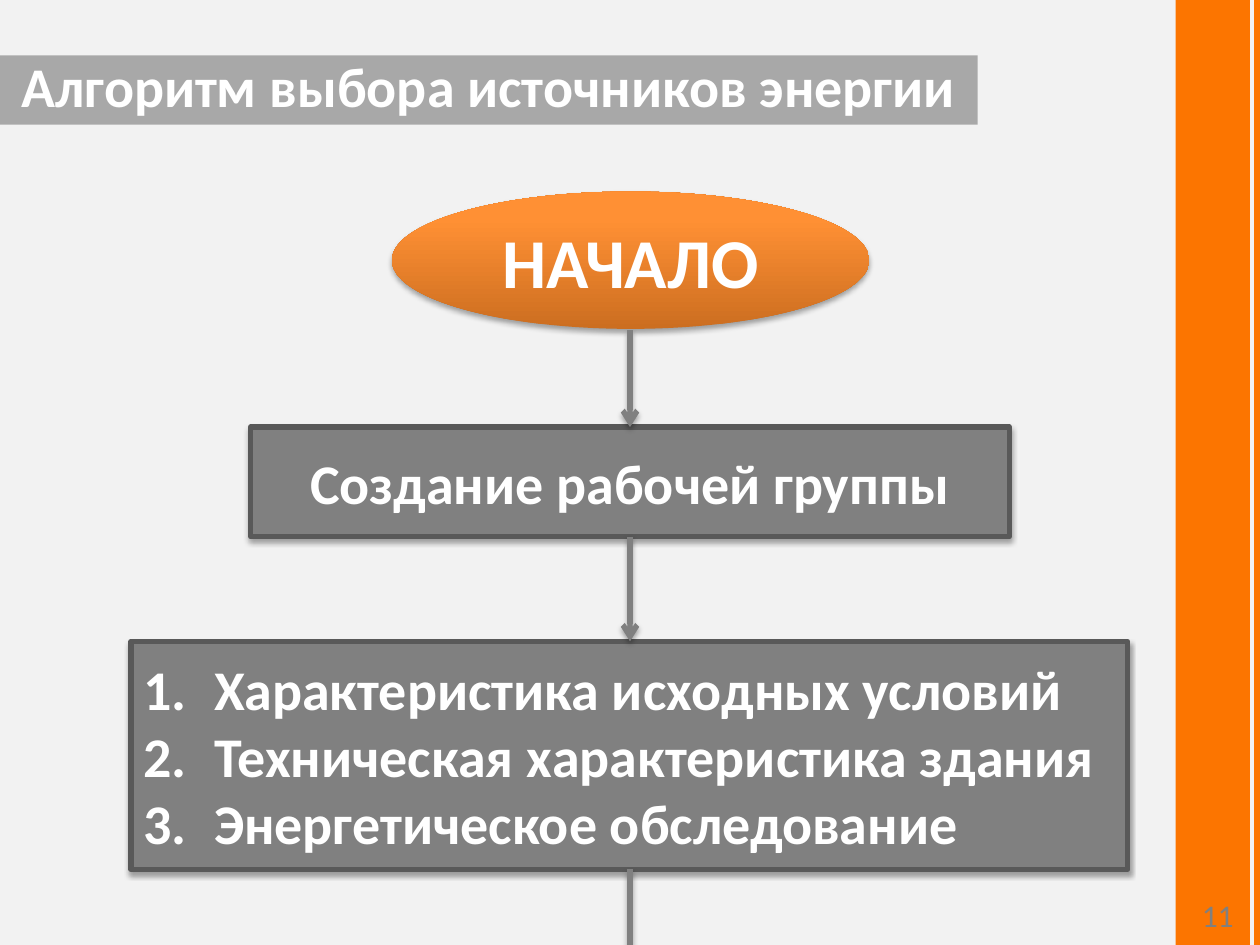
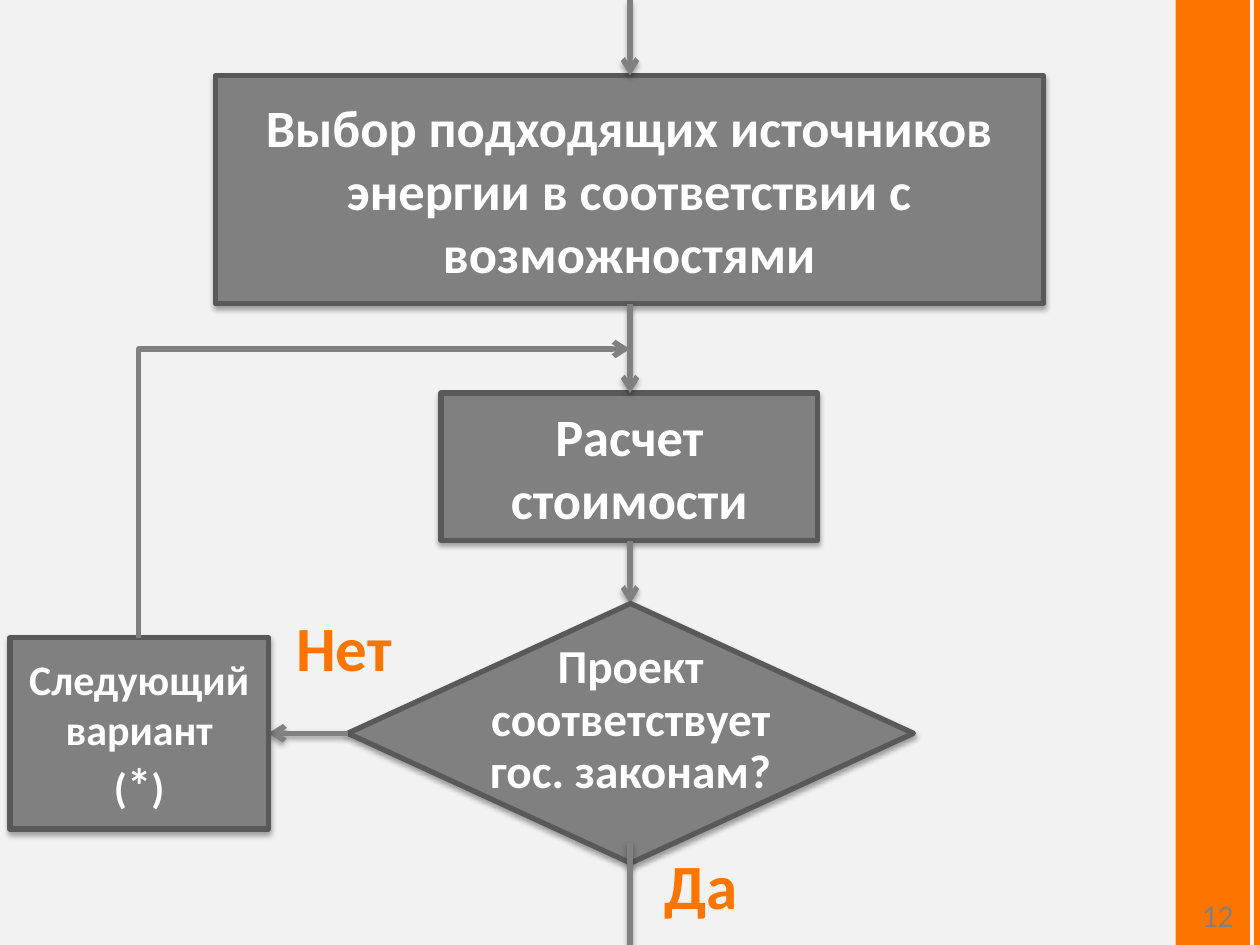
from copy import deepcopy

from lxml import etree
from pptx import Presentation
from pptx.dml.color import RGBColor
from pptx.enum.shapes import MSO_CONNECTOR, MSO_SHAPE
from pptx.enum.text import MSO_ANCHOR, MSO_AUTO_SIZE, PP_ALIGN
from pptx.oxml.ns import qn
from pptx.util import Inches, Pt

RECTANGLE, ELLIPSE = MSO_SHAPE.RECTANGLE, MSO_SHAPE.OVAL
DECISION = MSO_SHAPE.FLOWCHART_DECISION
STRAIGHT, ELBOW = MSO_CONNECTOR.STRAIGHT, MSO_CONNECTOR.ELBOW
CENTER, LEFT = PP_ALIGN.CENTER, PP_ALIGN.LEFT
TOP, MIDDLE, BOTTOM = MSO_ANCHOR.TOP, MSO_ANCHOR.MIDDLE, MSO_ANCHOR.BOTTOM
NO_AUTOFIT = MSO_AUTO_SIZE.NONE

PAPER = RGBColor(0xF2, 0xF2, 0xF2)
ORANGE = RGBColor(0xFC, 0x75, 0x00)
GRAY = RGBColor(0x80, 0x80, 0x80)
DARK_GRAY = RGBColor(0x59, 0x59, 0x59)
INK = RGBColor(0x0D, 0x0D, 0x0D)
WHITE = RGBColor(0xFF, 0xFF, 0xFF)
START_STOPS = [
    (0, RGBColor(0xCC, 0x6E, 0x20)),
    (0.8, RGBColor(0xFF, 0x90, 0x34)),
    (1, RGBColor(0xFF, 0x91, 0x36)),
]

FONT = "Calibri"
TITLE_ONLY, BLANK = 5, 6
WIDTH, HEIGHT = 10, 7.5
AXIS = 5


def child(parent, tag, **attributes):
    return etree.SubElement(parent, qn(tag), {k: str(v) for k, v in attributes.items()})


class Flowchart:
    def __init__(self):
        self.prs = Presentation()
        self.prs.slide_width, self.prs.slide_height = Inches(WIDTH), Inches(HEIGHT)
        backdrop = self.prs.slide_master.background.fill
        backdrop.solid()
        backdrop.fore_color.rgb = PAPER
        self.slide = None

    def new_slide(self, layout, number):
        self.slide = self.prs.slides.add_slide(self.prs.slide_layouts[layout])
        band = self.shape(RECTANGLE, 9.33, 0, 0.59, HEIGHT)
        self.paint(band, ORANGE)
        self.connector(STRAIGHT, (9.98, 0), (9.98, HEIGHT), ORANGE, 4)
        self.label(str(number), 9.33, 7.06, 0.67, 0.42, 18, GRAY, bold=False)

    def title(self, text, left, top, width, height):
        title = self.slide.shapes.title
        title.left, title.top = Inches(left), Inches(top)
        title.width, title.height = Inches(width), Inches(height)
        self.paint(title, INK)
        tint = title._element.spPr.find(qn("a:solidFill"))[0]
        child(tint, "a:alpha", val=32000)
        self.fill_text(title, [text], 32, anchor=BOTTOM)

    def shape(self, kind, left, top, width, height):
        shape = self.slide.shapes.add_shape(
            kind, Inches(left), Inches(top), Inches(width), Inches(height))
        shape.shadow.inherit = False
        shape.line.fill.background()
        return shape

    def paint(self, shape, color):
        shape.fill.solid()
        shape.fill.fore_color.rgb = color

    def shadow(self, element):
        effects = element.spPr.find(qn("a:effectLst"))
        outer = child(effects, "a:outerShdw", blurRad=Pt(3.1), dist=Pt(1.8),
                      dir=5400000, rotWithShape=0)
        child(child(outer, "a:srgbClr", val="000000"), "a:alpha", val=35000)

    def fill_text(self, shape, paragraphs, size, color=WHITE, bold=True,
                  align=CENTER, anchor=MIDDLE):
        frame = shape.text_frame
        frame.auto_size = NO_AUTOFIT
        frame.word_wrap = True
        frame.vertical_anchor = anchor
        for index, content in enumerate(paragraphs):
            paragraph = frame.add_paragraph() if index else frame.paragraphs[0]
            paragraph.alignment = align
            runs = [(content, size)] if isinstance(content, str) else content
            for text, run_size in runs:
                run = paragraph.add_run()
                run.text = text
                run.font.name, run.font.size = FONT, Pt(run_size)
                run.font.bold, run.font.color.rgb = bold, color
        return frame

    def label(self, text, left, top, width, height, size, color, bold=True):
        box = self.slide.shapes.add_textbox(
            Inches(left), Inches(top), Inches(width), Inches(height))
        self.fill_text(box, [text], size, color, bold, anchor=TOP)

    def start(self, text, left, top, width, height):
        start = self.shape(ELLIPSE, left, top, width, height)
        start.fill.gradient()
        start.fill.gradient_angle = 90
        stop_list = start._element.spPr.find(qn("a:gradFill")).find(qn("a:gsLst"))
        stop_list.append(deepcopy(stop_list[0]))
        for stop, (position, color) in zip(start.fill.gradient_stops, START_STOPS):
            stop.position, stop.color.rgb = position, color
        self.shadow(start._element)
        self.fill_text(start, [text], 40)

    def step(self, paragraphs, left, top, width, height, size,
             kind=RECTANGLE, align=CENTER, anchor=MIDDLE):
        step = self.shape(kind, left, top, width, height)
        self.paint(step, GRAY)
        step.line.color.rgb, step.line.width = DARK_GRAY, Pt(3)
        self.shadow(step._element)
        return self.fill_text(step, paragraphs, size, align=align, anchor=anchor)

    def numbered_step(self, items, left, top, width, height, size):
        frame = self.step(items, left, top, width, height, size, align=LEFT)
        for paragraph in frame.paragraphs:
            properties = paragraph._p.get_or_add_pPr()
            properties.set("marL", str(Inches(0.56)))
            properties.set("indent", str(-Inches(0.56)))
            child(properties, "a:buFont", typeface="+mj-lt")
            child(properties, "a:buAutoNum", type="arabicPeriod")

    def decision(self, text, left, top, width, height, size):
        frame = self.step([text], left, top, width, height, size, DECISION, anchor=BOTTOM)
        frame.margin_left = frame.margin_right = 0
        frame.margin_top = frame.margin_bottom = 0
        frame.paragraphs[0].line_spacing = Pt(30)

    def connector(self, kind, begin, end, color=GRAY, weight=3, head=False):
        line = self.slide.shapes.add_connector(
            kind, *(Inches(value) for value in (*begin, *end)))
        line.line.color.rgb, line.line.width = color, Pt(weight)
        if head:
            child(line.line._get_or_add_ln(), "a:tailEnd", type="arrow")
        child(line._element.spPr, "a:effectLst")
        return line

    def flow(self, begin, end, head=True):
        self.shadow(self.connector(STRAIGHT, begin, end, head=head)._element)

    def down(self, top, bottom, head=True):
        self.flow((AXIS, top), (AXIS, bottom), head)

    def loop_back(self, begin, end):
        middle_x, middle_y = (begin[0] + end[0]) / 2, (begin[1] + end[1]) / 2
        half_width, half_height = (begin[1] - end[1]) / 2, (end[0] - begin[0]) / 2
        loop = self.connector(
            ELBOW, (middle_x + half_width, middle_y + half_height),
            (middle_x - half_width, middle_y - half_height), head=True)
        properties = loop._element.spPr
        properties.find(qn("a:xfrm")).set("rot", "5400000")
        properties.find(qn("a:prstGeom")).set("prst", "bentConnector2")


def main():
    chart = Flowchart()

    chart.new_slide(TITLE_ONLY, 11)
    chart.start("НАЧАЛО", 3.11, 1.52, 3.79, 1.09)
    chart.numbered_step(
        ["Характеристика исходных условий",
         "Техническая характеристика здания",
         "Энергетическое обследование"], 1.04, 5.09, 7.91, 1.81, 32)
    chart.step(["Создание рабочей группы"], 1.99, 3.39, 6.02, 0.87, 32)
    chart.title("Алгоритм выбора источников энергии", 0, 0.44, 7.76, 0.55)
    chart.down(2.62, 3.39)
    chart.down(4.26, 5.09)
    chart.down(6.9, HEIGHT, head=False)

    chart.new_slide(BLANK, 12)
    chart.step(["Расчет стоимости"], 3.5, 3.12, 2.99, 1.17, 30)
    chart.step(["Выбор подходящих источников энергии в соответствии с возможностями"],
               1.71, 0.6, 6.57, 1.81, 30)
    chart.down(0, 0.6)
    chart.down(2.41, 3.12)
    chart.down(4.29, 4.79)
    chart.decision("Проект соответствует гос. законам?", 2.76, 4.79, 4.49, 2.06, 27)
    chart.down(6.69, HEIGHT, head=False)
    chart.label("Да", 5.16, 6.67, 0.81, 0.71, 36, ORANGE)
    chart.label("Нет", 2.09, 4.78, 1.28, 0.71, 36, ORANGE)
    chart.flow((2.76, 5.82), (2.13, 5.82))
    chart.step(["Следующий вариант", [("(", 24), ("*", 28), (")", 24)]],
               0.08, 5.06, 2.05, 1.52, 24)
    chart.loop_back((1.1, 5.06), (AXIS, 2.77))

    chart.prs.save("out.pptx")


if __name__ == "__main__":
    main()
